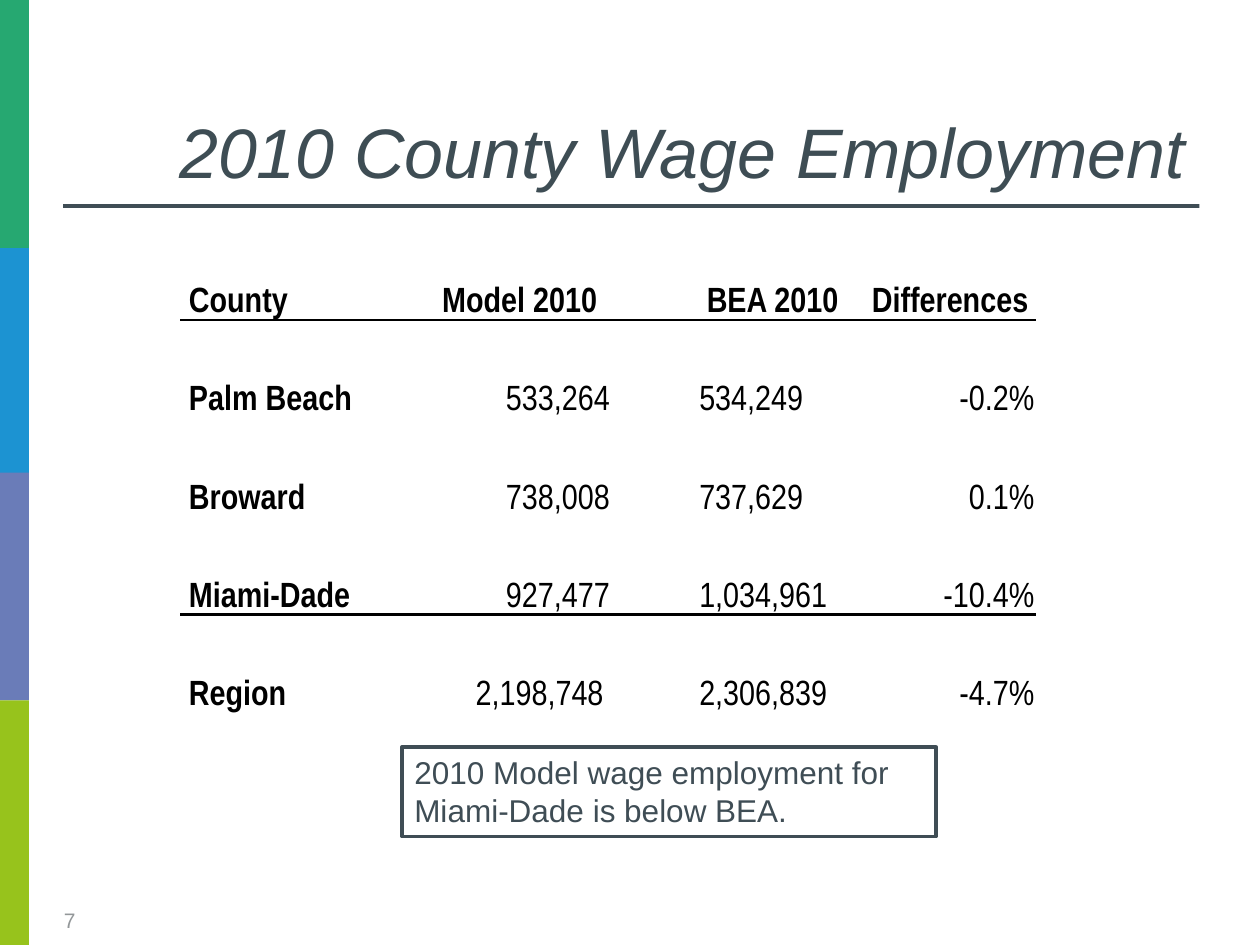
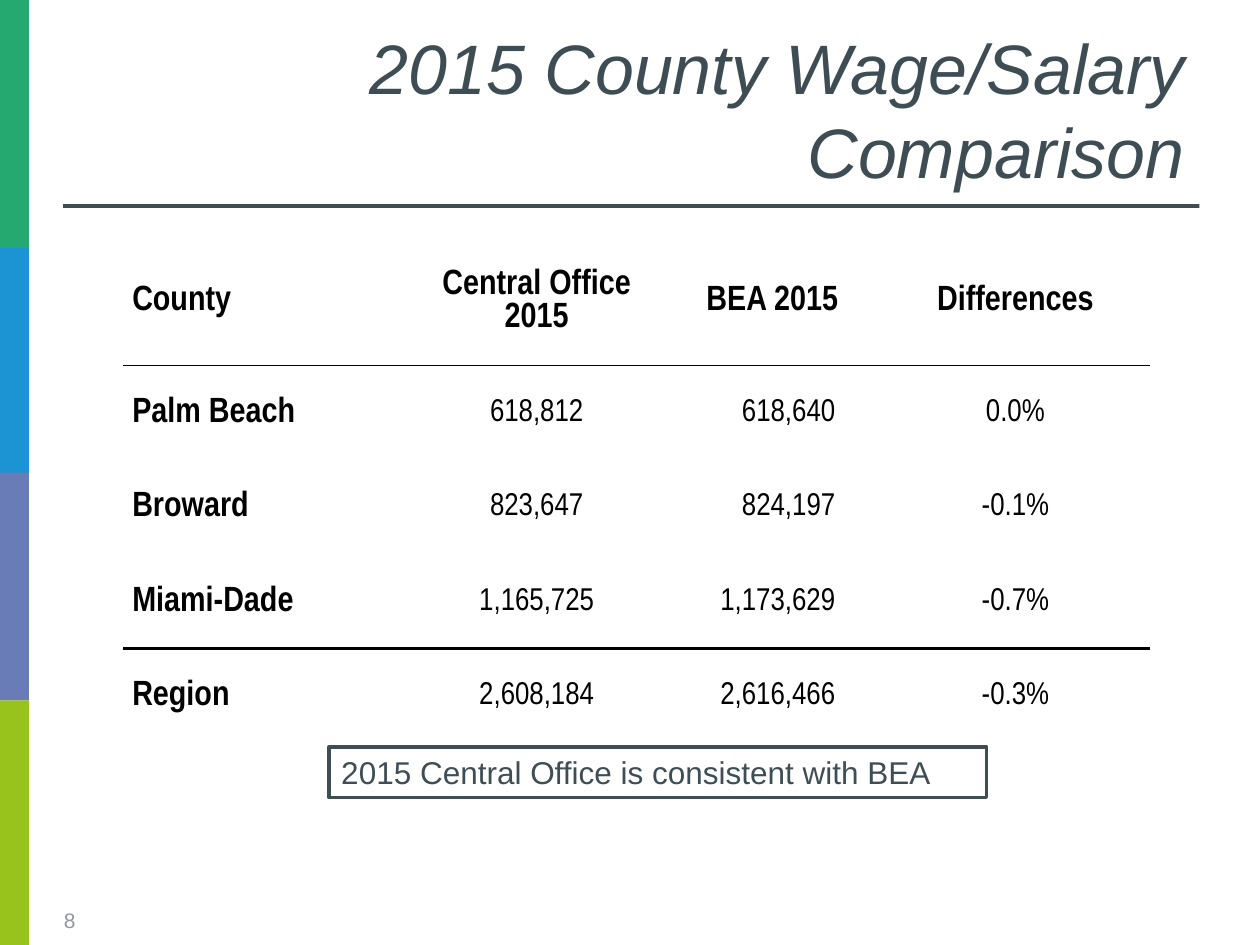
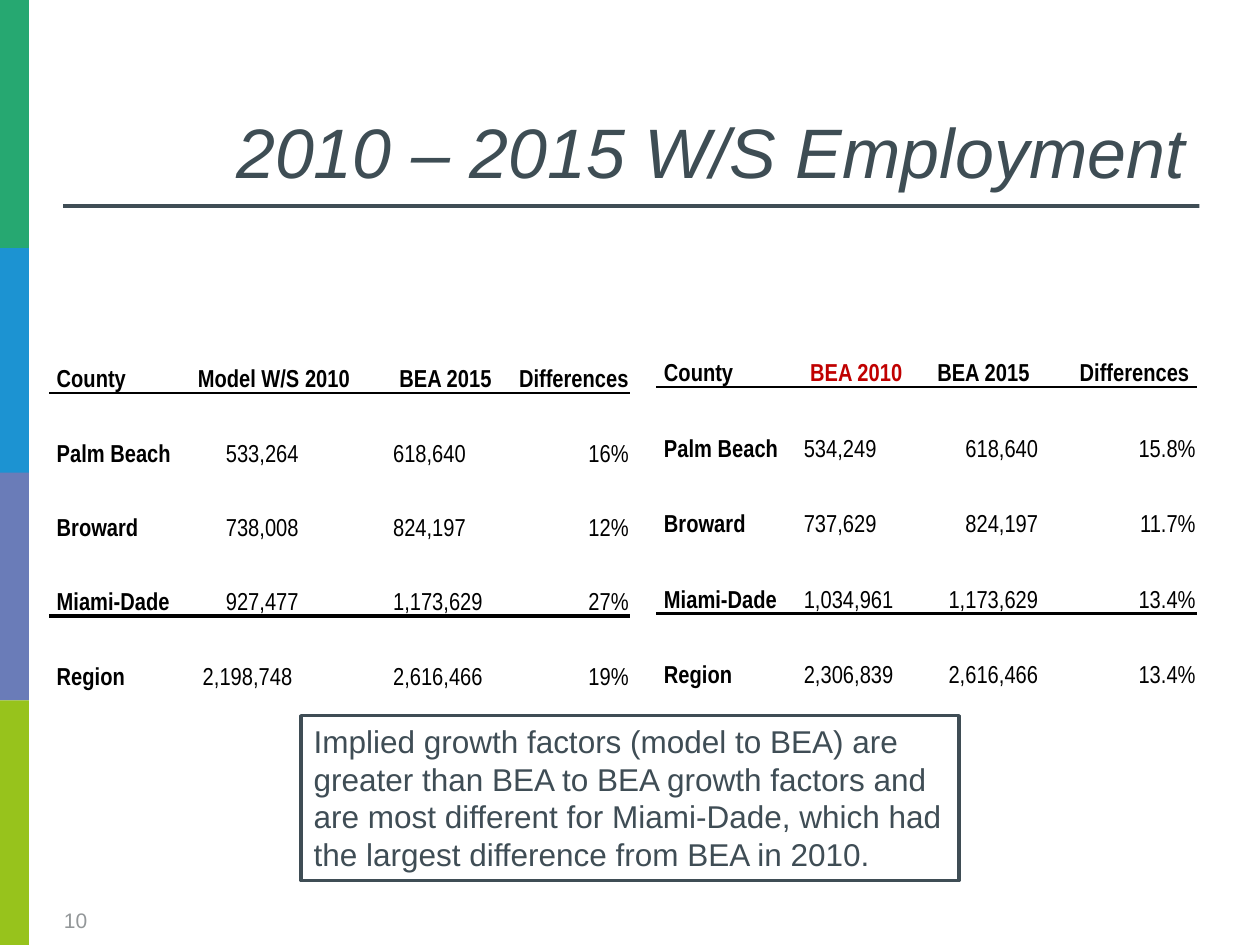
"""Build three slides comparing county wage employment figures."""
from lxml import etree
from pptx import Presentation
from pptx.dml.color import RGBColor
from pptx.enum.shapes import MSO_SHAPE
from pptx.enum.text import MSO_ANCHOR, PP_ALIGN
from pptx.oxml.ns import qn
from pptx.util import Inches, Pt

LEFT, CENTER, RIGHT = PP_ALIGN.LEFT, PP_ALIGN.CENTER, PP_ALIGN.RIGHT
TOP, MIDDLE, BOTTOM = MSO_ANCHOR.TOP, MSO_ANCHOR.MIDDLE, MSO_ANCHOR.BOTTOM
RECTANGLE = MSO_SHAPE.RECTANGLE

GREEN = RGBColor(0x26, 0xA8, 0x71)
BLUE = RGBColor(0x1C, 0x93, 0xD2)
VIOLET = RGBColor(0x6A, 0x7C, 0xB8)
LIME = RGBColor(0x97, 0xC3, 0x1C)
SLATE = RGBColor(0x3F, 0x4D, 0x55)
TITLE_SLATE = RGBColor(0x3E, 0x4D, 0x54)
GRAY = RGBColor(0x93, 0x97, 0x99)
RED = RGBColor(0xC0, 0x00, 0x00)
BLACK = RGBColor(0x00, 0x00, 0x00)
WHITE = RGBColor(0xFF, 0xFF, 0xFF)

NO_STYLE = "{2D5ABB26-0587-4C30-8999-92F81FD0307C}"
COUNTIES = ["Palm Beach", "Broward", "Miami-Dade", "Region"]
MODEL_2010 = ["533,264", "738,008", "927,477", "2,198,748"]
BEA_2010 = ["534,249", "737,629", "1,034,961", "2,306,839"]
BEA_2015 = ["618,640", "824,197", "1,173,629", "2,616,466"]
OFFICE_2015 = ["618,812", "823,647", "1,165,725", "2,608,184"]
RULE_WEIGHTS = {0: 1, 3: 2}
TOTAL_ROW = 4
TOTAL_SHIFT = 0.05
SHIFTED_HEADING = "Model"
EDGE, GAP, WIDE_GAP = 0.01, 0.06, 0.07

BANDS = [(GREEN, 0, 1.97), (BLUE, 1.97, 1.79), (VIOLET, 3.75, 1.81), (LIME, 5.56, 1.94)]

SLIDES = [
    {
        "number": "7",
        "title": "2010 County Wage Employment",
        "note": ("2010 Model wage employment for Miami-Dade is below BEA.", 3.19, 5.93, 4.24, 0.71),
        "tables": [{
            "left": 1.43, "top": 1.86, "header": 0.68, "row": 0.78,
            "anchor": BOTTOM, "size": 20, "body_size": 20,
            "columns": [
                (2.01, LEFT, WIDE_GAP, LEFT, WIDE_GAP, "County", COUNTIES),
                (2.1, LEFT, WIDE_GAP, RIGHT, 0.7, "Model 2010", MODEL_2010),
                (1.37, LEFT, WIDE_GAP, LEFT, EDGE, "BEA 2010", BEA_2010),
                (1.31, LEFT, EDGE, RIGHT, EDGE, "Differences",
                 ["-0.2%", "0.1%", "-10.4%", "-4.7%"]),
            ],
        }],
    },
    {
        "number": "8",
        "title": "2015 County Wage/Salary Comparison",
        "note": ("2015 Central Office is consistent with BEA", 2.61, 5.93, 5.22, 0.4),
        "tables": [{
            "left": 0.98, "top": 1.88, "header": 1.02, "row": 0.75,
            "anchor": MIDDLE, "size": 20, "body_size": 18,
            "columns": [
                (2.27, LEFT, WIDE_GAP, LEFT, WIDE_GAP, "County", COUNTIES),
                (2.02, CENTER, EDGE, CENTER, EDGE, "Central Office 2015", OFFICE_2015),
                (1.72, CENTER, EDGE, RIGHT, 0.36, "BEA 2015", BEA_2015),
                (2.14, CENTER, EDGE, CENTER, EDGE, "Differences",
                 ["0.0%", "-0.1%", "-0.7%", "-0.3%"]),
            ],
        }],
    },
    {
        "number": "10",
        "title": "2010 – 2015 W/S Employment",
        "note": ("Implied growth factors (model to BEA) are greater than BEA to BEA growth factors "
                 "and are most different for Miami-Dade, which had the largest difference from "
                 "BEA in 2010.", 2.39, 5.68, 5.22, 1.31),
        "tables": [
            {
                "left": 5.21, "top": 2.17, "header": 0.9, "row": 0.6,
                "anchor": BOTTOM, "size": 14, "body_size": 14, "red_column": 1,
                "columns": [
                    (1.16, LEFT, GAP, LEFT, GAP, "County", COUNTIES),
                    (1.01, LEFT, GAP, LEFT, EDGE, "BEA 2010", BEA_2010),
                    (1.04, LEFT, GAP, RIGHT, 0.18, "BEA 2015", BEA_2015),
                    (1.08, RIGHT, GAP, RIGHT, EDGE, "Differences",
                     ["15.8%", "11.7%", "13.4%", "13.4%"]),
                ],
            },
            {
                "left": 0.39, "top": 2.78, "header": 0.34, "row": 0.59,
                "anchor": BOTTOM, "size": 14, "body_size": 14,
                "columns": [
                    (1.12, LEFT, GAP, LEFT, GAP, "County", COUNTIES),
                    (1.6, LEFT, GAP, RIGHT, 0.74, "Model W/S 2010", MODEL_2010),
                    (0.94, LEFT, GAP, LEFT, EDGE, "BEA 2015", BEA_2015),
                    (0.95, RIGHT, EDGE, RIGHT, EDGE, "Differences",
                     ["16%", "12%", "27%", "19%"]),
                ],
            },
        ],
    },
]


def add_box(slide, left, top, width, height, fill, line=None):
    """Add a filled rectangle with an optional outline."""
    shape = slide.shapes.add_shape(
        RECTANGLE, Inches(left), Inches(top), Inches(width), Inches(height))
    shape.shadow.inherit = False
    shape.fill.solid()
    shape.fill.fore_color.rgb = fill
    if line is None:
        shape.line.fill.background()
    else:
        shape.line.color.rgb = line
        shape.line.width = Pt(2)
    return shape


def write(frame, text, size, color, name="Arial", align=LEFT, anchor=TOP):
    """Write one paragraph into a text frame and return it."""
    frame.word_wrap = True
    frame.vertical_anchor = anchor
    paragraph = frame.paragraphs[0]
    paragraph.text = text
    paragraph.alignment = align
    paragraph.font.size = Pt(size)
    paragraph.font.name = name
    paragraph.font.color.rgb = color
    return paragraph


presentation = Presentation()
presentation.slide_width = Inches(10)
presentation.slide_height = Inches(7.5)

for content in SLIDES:
    slide = presentation.slides.add_slide(presentation.slide_layouts[6])
    for color, top, height in BANDS:
        add_box(slide, 0, top, 0.23, height, color)
    add_box(slide, 0.5, 1.62, 9.02, 0.03, SLATE)

    title = slide.shapes.add_textbox(Inches(0.5), Inches(-0.01), Inches(9), Inches(1.59))
    paragraph = write(title.text_frame, content["title"], 40, TITLE_SLATE,
                      align=RIGHT, anchor=BOTTOM)
    paragraph.font.italic = True

    number = slide.shapes.add_textbox(Inches(0.41), Inches(7.1), Inches(0.73), Inches(0.4))
    write(number.text_frame, content["number"], 12, GRAY, anchor=MIDDLE)

    for layout in content["tables"]:
        columns = layout["columns"]
        row_heights = [layout["header"]] + [layout["row"]] * len(COUNTIES)
        frame = slide.shapes.add_table(
            len(row_heights), len(columns), Inches(layout["left"]), Inches(layout["top"]),
            Inches(sum(column[0] for column in columns)), Inches(sum(row_heights)))
        table = frame.table
        table.first_row = table.horz_banding = False
        table._tbl.tblPr.find(qn("a:tableStyleId")).text = NO_STYLE
        for row, height in zip(table.rows, row_heights):
            row.height = Inches(height)

        for column_index, column in enumerate(columns):
            width, head_align, head_inset, body_align, body_inset, heading, values = column
            table.columns[column_index].width = Inches(width)
            for row_index, text in enumerate([heading] + values):
                is_header = row_index == 0
                is_bold = is_header or column_index == 0
                align, inset = (head_align, head_inset) if is_header else (body_align, body_inset)
                if row_index == TOTAL_ROW and heading.startswith(SHIFTED_HEADING):
                    inset += TOTAL_SHIFT
                is_red = is_header and column_index == layout.get("red_column")

                cell = table.cell(row_index, column_index)
                cell.margin_left = Inches(inset if align == LEFT else EDGE)
                cell.margin_right = Inches(inset if align == RIGHT else EDGE)
                cell.margin_top, cell.margin_bottom = Inches(EDGE), 0
                cell.vertical_anchor = layout["anchor"]
                paragraph = write(cell.text_frame, text,
                                  layout["size" if is_bold else "body_size"],
                                  RED if is_red else BLACK, "Arial Narrow", align,
                                  layout["anchor"])
                paragraph.font.bold = is_bold

                if row_index in RULE_WEIGHTS:
                    properties = cell._tc.get_or_add_tcPr()
                    rule = etree.SubElement(properties, qn("a:lnB"),
                                            w=str(Pt(RULE_WEIGHTS[row_index])))
                    rule_fill = etree.SubElement(rule, qn("a:solidFill"))
                    etree.SubElement(rule_fill, qn("a:srgbClr"), val=str(BLACK))
                cell.fill.background()

    text, left, top, width, height = content["note"]
    note = add_box(slide, left, top, width, height, WHITE, SLATE)
    write(note.text_frame, text, 18, SLATE)

presentation.save("out.pptx")
